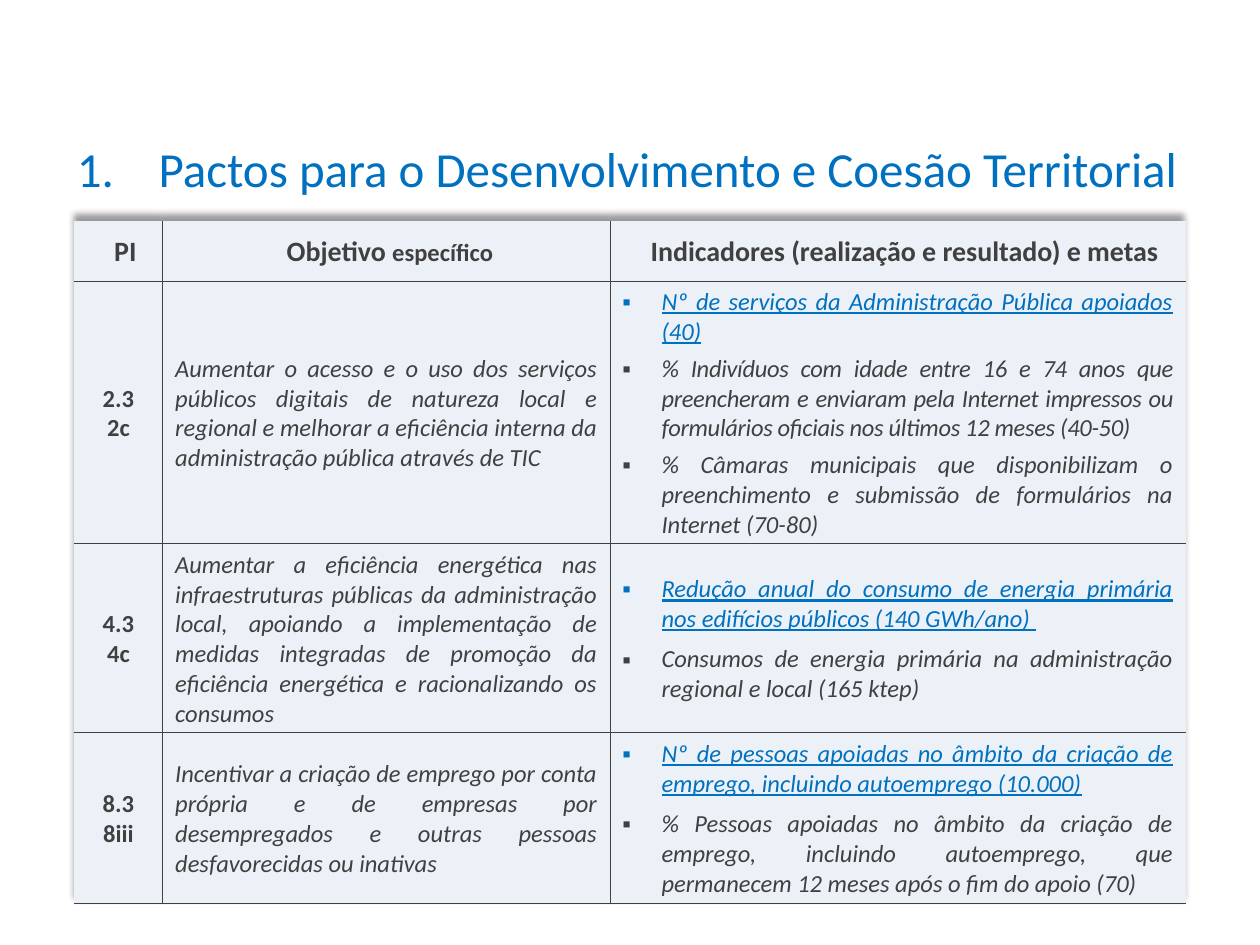
from lxml import etree
from pptx import Presentation
from pptx.dml.color import RGBColor
from pptx.enum.text import MSO_ANCHOR, PP_ALIGN
from pptx.oxml import parse_xml
from pptx.oxml.ns import qn
from pptx.util import Inches, Pt

COLORS = {"accent": "0070C0", "text": "404040", "cell": "ECF1F8", "shadow": "000000"}
NAMESPACE = 'xmlns:a="http://schemas.openxmlformats.org/drawingml/2006/main"'
PLAIN_TABLE_STYLE = "{2D5ABB26-0587-4C30-8999-92F81FD0307C}"
COLUMN_WIDTHS = [0.7, 3.55, 4.57]
ROW_HEIGHTS = [0.48, 2.08, 1.5, 1.35]
HEADERS = [
    [("PI", 16)],
    [("Objetivo ", 16), ("específico", 14), (" ", 16)],
    [("Indicadores (realização e resultado) e metas", 16)],
]
# Priority codes, objective, space between indicators, indicators (the first is highlighted)
PRIORITIES = [
    (["2.3", "2c"],
     "Aumentar o acesso e o uso dos serviços públicos digitais de natureza local e regional "
     "e melhorar a eficiência interna da administração pública através de TIC",
     4,
     ["Nº de serviços da Administração Pública apoiados (40)",
      "% Indivíduos com idade entre 16 e 74 anos que preencheram e enviaram pela Internet "
      "impressos ou formulários oficiais nos últimos 12 meses (40-50)",
      "% Câmaras municipais que disponibilizam o preenchimento e submissão de formulários "
      "na Internet (70-80)"]),
    (["4.3", "4c"],
     "Aumentar a eficiência energética nas infraestruturas públicas da administração local, "
     "apoiando a implementação de medidas integradas de promoção da eficiência energética "
     "e racionalizando os consumos",
     6,
     ["Redução anual do consumo de energia primária nos edifícios públicos (140 GWh/ano) ",
      "Consumos de energia primária na administração regional e local (165 ktep)"]),
    (["8.3", "8iii"],
     "Incentivar a criação de emprego por conta própria e de empresas por desempregados "
     "e outras pessoas desfavorecidas ou inativas",
     6,
     ["Nº de pessoas apoiadas no âmbito da criação de emprego, incluindo autoemprego (10.000)",
      "% Pessoas apoiadas no âmbito da criação de emprego, incluindo autoemprego, que "
      "permanecem 12 meses após o fim do apoio (70)"]),
]


def format_run(run, size, color="text", bold=False, italic=False, underline=False):
    font = run.font
    font.name, font.size = "Calibri", Pt(size)
    font.bold, font.italic, font.underline = bold, italic, underline
    font.color.rgb = RGBColor.from_string(COLORS[color])


def add_marker(paragraph, indent, tag, **attributes):
    """Give a paragraph a hanging indent with a bullet or a number."""
    properties = paragraph._p.get_or_add_pPr()
    properties.set("marL", str(Inches(indent)))
    properties.set("indent", str(-Inches(indent)))
    if tag == "a:buChar":
        etree.SubElement(properties, qn("a:buFont"), typeface="Arial")
    etree.SubElement(properties, qn(tag), **attributes)


presentation = Presentation()
presentation.slide_width, presentation.slide_height = Inches(10), Inches(7.5)
slide = presentation.slides.add_slide(presentation.slide_layouts[5])

title = slide.shapes.title
title.left, title.top = Inches(0.51), Inches(1.05)
title.width, title.height = Inches(9.06), Inches(0.57)
title.text_frame.text = "Pactos para o Desenvolvimento e Coesão Territorial"
title.text_frame.vertical_anchor = MSO_ANCHOR.MIDDLE
paragraph = title.text_frame.paragraphs[0]
paragraph.alignment = PP_ALIGN.LEFT
add_marker(paragraph, 0.65, "a:buAutoNum", type="arabicPeriod")
format_run(paragraph.runs[0], 28, "accent")

table_frame = slide.shapes.add_table(
    len(ROW_HEIGHTS), len(COLUMN_WIDTHS), Inches(0.59), Inches(1.75),
    Inches(sum(COLUMN_WIDTHS)), Inches(sum(ROW_HEIGHTS)))
table = table_frame.table
table.first_row = table.horz_banding = False
for column, width in zip(table.columns, COLUMN_WIDTHS):
    column.width = Inches(width)
for row, height in zip(table.rows, ROW_HEIGHTS):
    row.height = Inches(height)

table_properties = table._tbl.tblPr
table_properties.find(qn("a:tableStyleId")).text = PLAIN_TABLE_STYLE
table_properties.insert(0, parse_xml(
    f'<a:effectLst {NAMESPACE}><a:outerShdw blurRad="50800" dist="38100" dir="16200000" '
    f'rotWithShape="0"><a:srgbClr val="{COLORS["shadow"]}"><a:alpha val="40000"/>'
    '</a:srgbClr></a:outerShdw></a:effectLst>'))

for column, parts in enumerate(HEADERS):
    cell = table.cell(0, column)
    cell.margin_left, cell.margin_right = Inches(0.12), Inches(0.01)
    cell.margin_top, cell.margin_bottom = Inches(0.02), 0
    paragraph = cell.text_frame.paragraphs[0]
    paragraph.alignment = PP_ALIGN.CENTER
    for text, size in parts:
        run = paragraph.add_run()
        run.text = text
        format_run(run, size, bold=True)

for row, (codes, objective, gap, indicators) in enumerate(PRIORITIES, start=1):
    for column, lines in enumerate([codes, [objective], indicators]):
        cell = table.cell(row, column)
        cell.margin_bottom = Inches(0.03)
        cell.text_frame.text = "\n".join(lines)
        for index, paragraph in enumerate(cell.text_frame.paragraphs):
            paragraph.alignment = PP_ALIGN.JUSTIFY if column else PP_ALIGN.CENTER
            highlighted = column == 2 and index == 0
            if column == 2:
                if index:
                    paragraph.space_before = Pt(gap)
                add_marker(paragraph, 0.31, "a:buChar", char="▪")
            format_run(paragraph.runs[0], 14, "accent" if highlighted else "text",
                       bold=column == 0, italic=column > 0, underline=highlighted)

# The longest indicator is set slightly tighter to stay on three lines
long_indicator = table.cell(1, 2).text_frame.paragraphs[1].runs[0]
long_indicator.font._element.set("spc", "-20")

# Thin rules between columns and under every row
last_column = len(COLUMN_WIDTHS) - 1
for row in range(len(ROW_HEIGHTS)):
    for column in range(len(COLUMN_WIDTHS)):
        cell = table.cell(row, column)
        cell.vertical_anchor = MSO_ANCHOR.MIDDLE
        sides = {"lnL": column > 0, "lnR": column < last_column, "lnT": row > 0, "lnB": True}
        for side, visible in sides.items():
            if visible:
                cell._tc.get_or_add_tcPr().append(parse_xml(
                    f'<a:{side} {NAMESPACE} w="{Pt(0.25)}"><a:solidFill>'
                    f'<a:srgbClr val="{COLORS["text"]}"/></a:solidFill></a:{side}>'))
        cell.fill.solid()
        cell.fill.fore_color.rgb = RGBColor.from_string(COLORS["cell"])

presentation.save("out.pptx")
